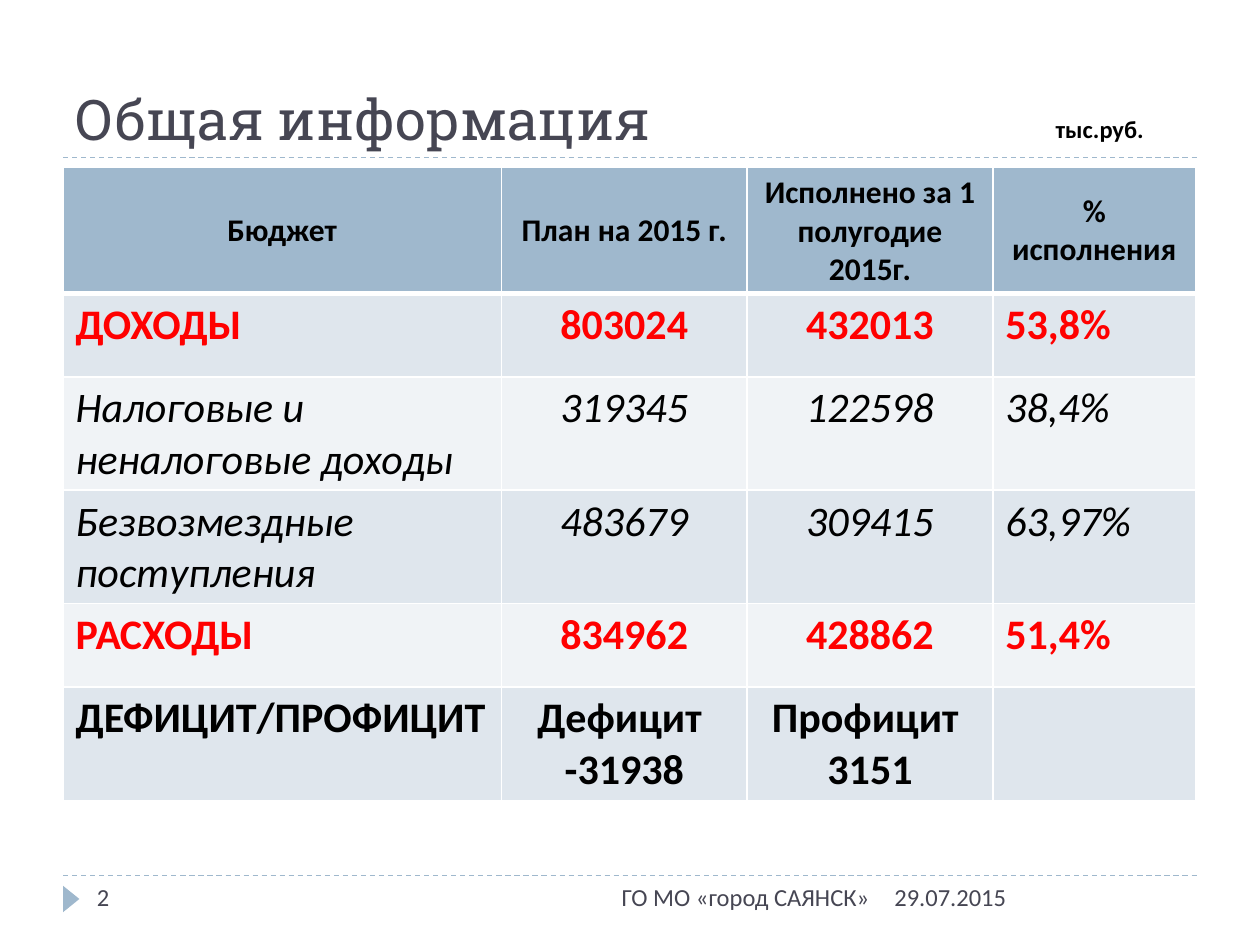
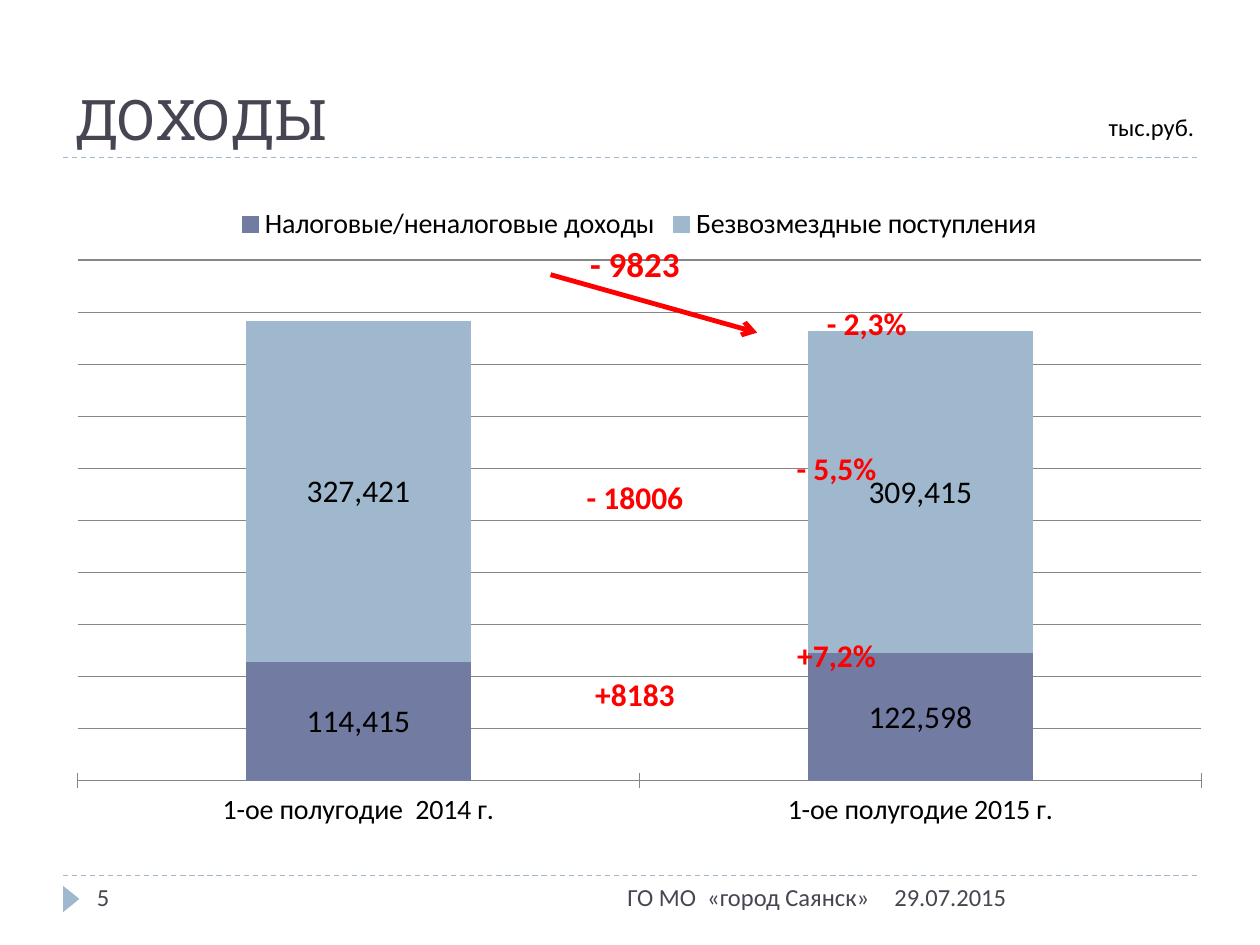
import pptx
import pptx.util
import pptx.chart.data
import pptx.dml.color
import pptx.enum.chart
import pptx.enum.dml
import pptx.enum.shapes
import pptx.enum.text
import pptx.oxml
import pptx.oxml.ns

RGB = pptx.dml.color.RGBColor
SHAPE = pptx.enum.shapes.MSO_SHAPE
ALIGN = pptx.enum.text.PP_ALIGN
ANCHOR = pptx.enum.text.MSO_ANCHOR
CHART = pptx.enum.chart

BLUE = RGB(0x9F, 0xB8, 0xCD)
VIOLET = RGB(0x72, 0x7C, 0xA3)
DARK = RGB(0x46, 0x46, 0x53)
GRAY = RGB(0x86, 0x86, 0x86)
RED = RGB(0xFF, 0, 0)
BLACK = RGB(0, 0, 0)
WHITE = RGB(0xFF, 0xFF, 0xFF)
BANDS = (RGB(0xDF, 0xE6, 0xED), RGB(0xF0, 0xF3, 0xF6))

SCALE = 9144  # EMU in one px, 100 px to the inch
DATE = "29.07.2015"
SPACE = pptx.oxml.ns.nsdecls("a")

# Text formats
TITLE = {"name": "Roboto Slab", "size": 32, "color": DARK}
FOOT = {"name": "Calibri", "size": 14, "color": DARK}
UNIT = {"name": "Calibri", "size": 14, "color": BLACK}
HEAD = {"name": "Calibri", "size": 18, "color": BLACK, "bold": True}
TOTAL = {**HEAD, "size": 24}
MAIN = {**TOTAL, "color": RED}
PART = {**TOTAL, "bold": False, "italic": True}
NOTE = {**HEAD, "color": RED}

# Table content
COLS = (348, 195, 195, 161)
ROWS = (
    (85, HEAD, ("Бюджет", "План на 2015 г.", "Исполнено за 1 полугодие 2015г.", "% исполнения")),
    (66, MAIN, ("ДОХОДЫ", "803024", "432013", "53,8%")),
    (83, PART, ("Налоговые и неналоговые доходы", "319345", "122598", "38,4%")),
    (86, PART, ("Безвозмездные поступления", "483679", "309415", "63,97%")),
    (66, MAIN, ("РАСХОДЫ", "834962", "428862", "51,4%")),
    (66, TOTAL, ("ДЕФИЦИТ/ПРОФИЦИТ", "Дефицит \n-31938", "Профицит \n3151", "")),
)

# Chart content
CATS = ("1-ое полугодие  2014 г.", "1-ое полугодие 2015 г.")
SERIES = (
    ("Налоговые/неналоговые доходы", (114415, 122598), VIOLET),
    ("Безвозмездные поступления", (327421, 309415), BLUE),
)
NOTES = (
    ("- 9823", (445, 186, 118, 47), 20),
    ("- 18006", (445, 375, 118, 39), 18),
    ("+8183", (445, 531, 118, 39), 18),
    ("- 2,3%", (641, 233, 94, 47), 18),
    ("- 5,5%", (617, 352, 94, 39), 18),
    ("+7,2%", (617, 493, 94, 54), 18),
)


def emu(*nums):
    return [pptx.util.Emu(num * SCALE) for num in nums]


def style(font, form):
    for key, val in form.items():
        if key == "color":
            font.color.rgb = val
        else:
            setattr(font, key, pptx.util.Pt(val) if key == "size" else val)


def write(frame, text, form, align=ALIGN.LEFT):
    for num, line in enumerate(text.split("\n")):
        para = frame.add_paragraph() if num else frame.paragraphs[0]
        para.alignment = align
        run = para.add_run()
        run.text = line
        style(run.font, form)


def add_text(slide, text, box, form, align=ALIGN.LEFT, anchor=ANCHOR.TOP, wrap=True):
    frame = slide.shapes.add_textbox(*emu(*box)).text_frame
    frame.word_wrap = wrap
    frame.vertical_anchor = anchor
    write(frame, text, form, align)


def add_note(slide, text, box, size):
    shape = slide.shapes.add_shape(SHAPE.ROUNDED_RECTANGLE, *emu(*box))
    shape.shadow.inherit = False
    shape.fill.background()
    shape.line.fill.background()
    shape.text_frame.vertical_anchor = ANCHOR.MIDDLE
    write(shape.text_frame, text, {**NOTE, "size": size}, ALIGN.CENTER)


def add_line(slide, ends, color, width, dash=None, arrow=False):
    kind = pptx.enum.shapes.MSO_CONNECTOR.STRAIGHT
    line = slide.shapes.add_connector(kind, *emu(*ends))
    line.line.color.rgb = color
    line.line.width = pptx.util.Pt(width)
    if dash:
        line.line.dash_style = dash
    props = line._element.spPr
    if arrow:
        tail = pptx.oxml.parse_xml(f'<a:tailEnd {SPACE} type="arrow"/>')
        props.get_or_add_ln().append(tail)
    props.append(pptx.oxml.parse_xml(f"<a:effectLst {SPACE}/>"))


def add_frame(slide, title, foot, page):
    """Title, rules, marker and footer that the slides share."""
    for y in (695, 125):
        add_line(slide, (50, y, 950, y), BLUE, 0.75, pptx.enum.dml.MSO_LINE.DASH)
    mark = slide.shapes.add_shape(SHAPE.ISOSCELES_TRIANGLE, *emu(46, 707, 21, 13))
    mark.shadow.inherit = False
    mark.rotation = 90
    mark.fill.solid()
    mark.fill.fore_color.rgb = BLUE
    mark.line.fill.background()
    add_text(slide, title, (50, 17, 900, 108), TITLE, anchor=ANCHOR.BOTTOM)
    add_text(slide, DATE, (700, 695, 250, 40), FOOT)
    add_text(slide, foot, (317, 695, 383, 40), FOOT, ALIGN.RIGHT)
    add_text(slide, page, (67, 695, 217, 40), FOOT)


def edge(cell, side, width):
    xml = (f'<a:{side} {SPACE} w="{pptx.util.Pt(width)}">'
           f'<a:solidFill><a:srgbClr val="{WHITE}"/></a:solidFill></a:{side}>')
    cell._tc.get_or_add_tcPr().append(pptx.oxml.parse_xml(xml))


def add_grid(slide):
    high = sum(row[0] for row in ROWS)
    size = emu(50, 133, sum(COLS), high)
    table = slide.shapes.add_table(len(ROWS), len(COLS), *size).table
    for col, wide in zip(table.columns, COLS):
        col.width = emu(wide)[0]
    for y, (tall, form, texts) in enumerate(ROWS):
        table.rows[y].height = emu(tall)[0]
        for x, text in enumerate(texts):
            cell = table.cell(y, x)
            edges = {"lnL": 1, "lnR": 1, "lnT": 3 if y == 1 else 1, "lnB": 1 if y else 3}
            for side, width in edges.items():
                edge(cell, side, width)
            cell.fill.solid()
            cell.fill.fore_color.rgb = BANDS[(y - 1) % 2] if y else BLUE
            cell.vertical_anchor = ANCHOR.TOP if y else ANCHOR.MIDDLE
            if text:
                mid = y == 0 or x in (1, 2)
                write(cell.text_frame, text, form, ALIGN.CENTER if mid else ALIGN.LEFT)


def add_bars(slide):
    data = pptx.chart.data.CategoryChartData(number_format="#,##0")
    data.categories = CATS
    for name, vals, _ in SERIES:
        data.add_series(name, vals)
    kind = CHART.XL_CHART_TYPE.COLUMN_STACKED
    chart = slide.shapes.add_chart(kind, *emu(43, 153, 929, 514), data).chart
    style(chart.font, {"name": "Calibri", "size": 18, "color": BLACK})
    chart.has_title = False
    chart.has_legend = True
    chart.legend.position = CHART.XL_LEGEND_POSITION.TOP
    chart.legend.include_in_layout = False
    style(chart.legend.font, {**UNIT, "size": 16})

    # Axes
    base, side = chart.category_axis, chart.value_axis
    base.major_tick_mark = CHART.XL_TICK_MARK.CROSS
    style(base.tick_labels.font, {**UNIT, "size": 16})
    axis = {"visible": False, "has_major_gridlines": True,
            "minimum_scale": 0, "maximum_scale": 500000, "major_unit": 50000}
    for key, val in axis.items():
        setattr(side, key, val)
    for line in (base.format.line, side.major_gridlines.format.line):
        line.color.rgb = GRAY
        line.width = pptx.util.Pt(0.75)

    # Columns and their labels
    plot = chart.plots[0]
    for key, val in {"overlap": 100, "gap_width": 150, "vary_by_categories": False}.items():
        setattr(plot, key, val)
    for bar, (_, _, color) in zip(plot.series, SERIES):
        bar.format.fill.solid()
        bar.format.fill.fore_color.rgb = color
        tags = bar.data_labels
        show = {"show_value": True, "number_format": "#,##0", "number_format_is_linked": False}
        for key, val in show.items():
            setattr(tags, key, val)


def main():
    deck = pptx.Presentation()
    deck.slide_width, deck.slide_height = emu(1000, 750)
    blank = deck.slide_layouts[6]

    # Budget table
    slide = deck.slides.add_slide(blank)
    add_frame(slide, "Общая информация", "ГО МО «город САЯНСК»", "2")
    add_grid(slide)
    add_text(slide, "тыс.руб.", (828, 86, 102, 34), {**UNIT, "bold": True}, wrap=False)

    # Income chart
    slide = deck.slides.add_slide(blank)
    add_frame(slide, "ДОХОДЫ", "ГО МО  «город Саянск»", "5")
    add_bars(slide)
    add_text(slide, "тыс.руб.", (870, 84, 102, 34), UNIT, wrap=False)
    add_line(slide, (437, 218, 601, 264), RED, 2.75, arrow=True)
    for note in NOTES:
        add_note(slide, *note)

    deck.save("out.pptx")


if __name__ == "__main__":
    main()
